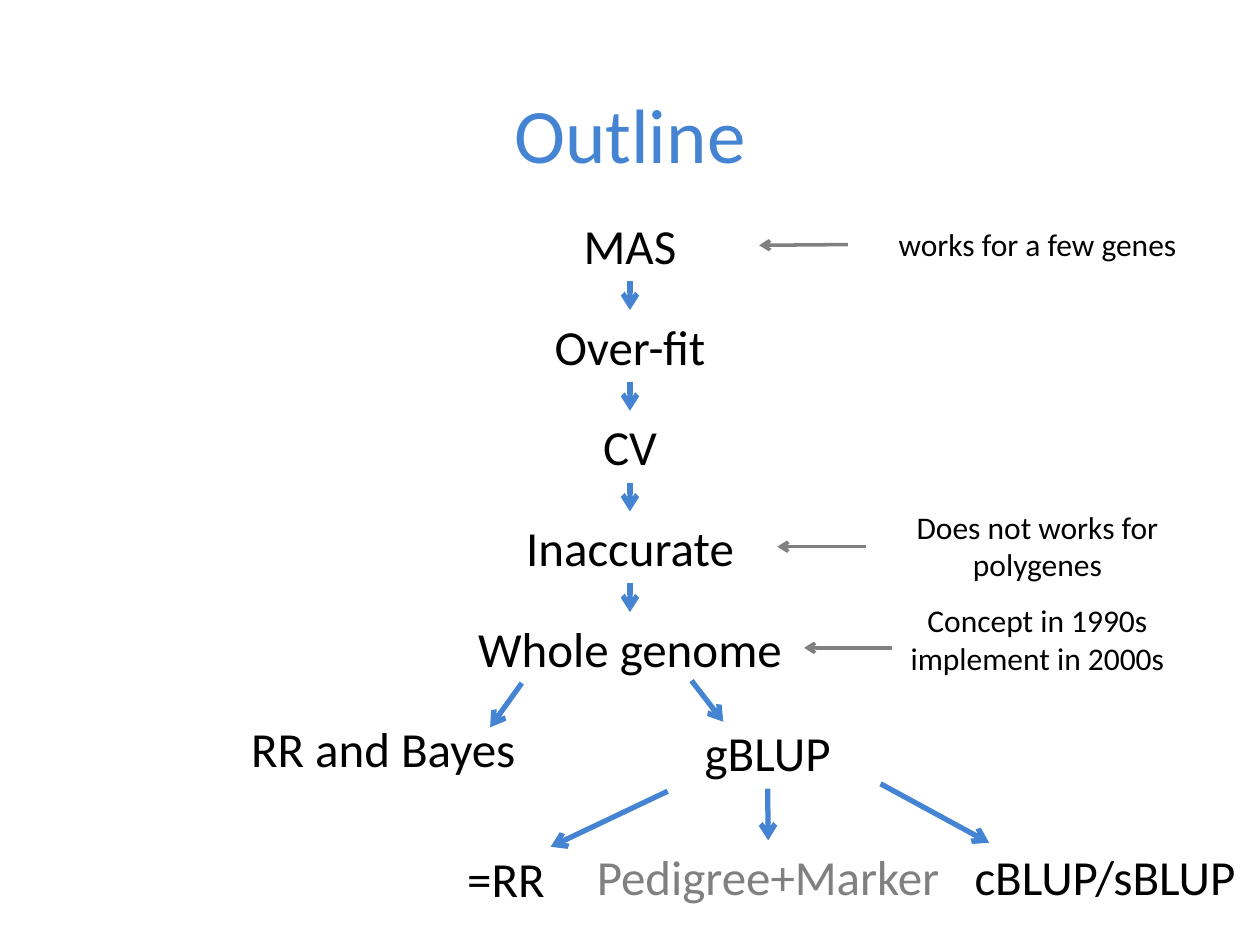
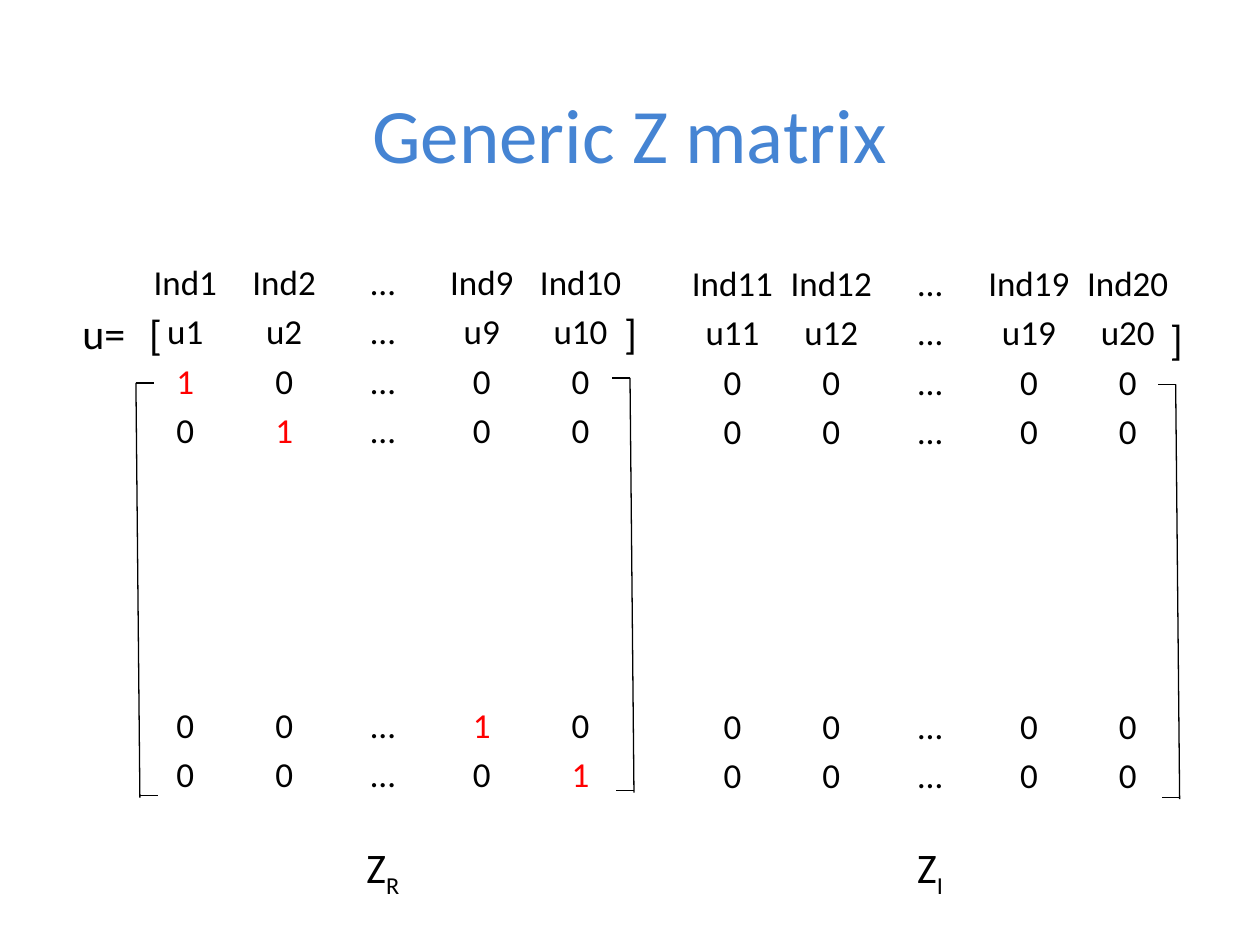
from lxml.etree import SubElement
from pptx import Presentation
from pptx.dml.color import RGBColor
from pptx.enum.shapes import MSO_CONNECTOR
from pptx.enum.text import MSO_ANCHOR, MSO_AUTO_SIZE, PP_ALIGN
from pptx.oxml.ns import qn
from pptx.util import Cm, Pt

FONT = "Calibri"
COLORS = {"title": "4584D3", "text": "000000", "muted": "808080", "one": "FF0000"}

# Outline: all places and lengths in centimetres
CENTER = 12.7
STEP_TOP, STEP_PITCH, STEP_HEIGHT = 4.22, 2.03, 1.45
STEPS = [("MAS", 5.21), ("Over-fit", 5.21), ("CV", 5.21),
         ("Inaccurate", 5.21), ("Whole genome", 7.37)]
BRANCHES = [  # text, left, top, width, colour
    ("RR and Bayes", 4.04, 14.35, 7.37, "text"),
    ("gBLUP", 11.79, 14.45, 7.37, "text"),
    ("=RR", 8.61, 16.99, 3.18, "text"),
    ("Pedigree+Marker", 11.18, 16.94, 8.61, "muted"),
    ("cBLUP/sBLUP", 19.15, 16.94, 6.25, "text"),
]
BRANCH_ARROWS = [
    ((10.52, 13.77), (9.88, 14.66)),
    ((13.94, 13.72), (14.58, 14.55)),
    ((13.46, 15.95), (11.1, 17.07)),
    ((17.75, 15.8), (19.94, 16.99)),
]
NOTE_LEFT, NOTE_WIDTH = 17.09, 7.65
NOTES = [  # text, top, height
    ("works for a few genes", 4.42, 1.02),
    ("Does not works for polygenes", 10.11, 1.8),
    ("Concept in 1990s implement in 2000s", 11.99, 1.8),
]
NOTE_ARROWS = [((17.45, 11.02), (15.67, 11.02)), ((17.98, 13.06), (16.21, 13.06))]

# Z matrix
MATRIX_SIZE = (9.96, 10.92)
GAP_ROWS = [""] * 5
MATRICES = [  # left, top, rows
    (2.74, 5.16, ["Ind1 Ind2 … Ind9 Ind10", "u1 u2 … u9 u10",
                  "1 0 … 0 0", "0 1 … 0 0", *GAP_ROWS,
                  "0 0 … 1 0", "0 0 … 0 1"]),
    (13.77, 5.18, ["Ind11 Ind12 … Ind19 Ind20", "u11 u12 … u19 u20",
                   *["0 0 … 0 0"] * 2, *GAP_ROWS, *["0 0 … 0 0"] * 2]),
]
VECTOR_MARKS = [("u=", 1.04, 6.07), ("[", 2.08, 6.1), ("]", 11.66, 6.07), ("]", 22.66, 6.2)]
BRACKETS = [(2.74, 7.72, 1), (12.7, 7.62, -1), (23.7, 7.75, -1)]  # left, top, tick direction
BRACKET_HEIGHT, BRACKET_LEAN, TICK = 8.36, 0.08, 0.36
MATRIX_NAMES = [("R", 6.78), ("I", 17.81)]


def style(para, size, color="text"):
    para.alignment = PP_ALIGN.CENTER
    for span in para.runs:
        span.font.name = FONT
        span.font.size = Pt(size)
        span.font.color.rgb = RGBColor.from_string(COLORS[color])


def add_text(page, text, left, top, width, height, size, color="text"):
    box = page.shapes.add_textbox(Cm(left), Cm(top), Cm(width), Cm(height))
    frame = box.text_frame
    frame.word_wrap = True
    frame.auto_size = MSO_AUTO_SIZE.SHAPE_TO_FIT_TEXT
    frame.text = text
    style(frame.paragraphs[0], size, color)
    return box


def add_page(deck, title):
    page = deck.slides.add_slide(deck.slide_layouts[6])
    frame = add_text(page, title, 1.27, 0.94, 22.86, 3.48, 44, "title").text_frame
    frame.auto_size = MSO_AUTO_SIZE.NONE
    frame.vertical_anchor = MSO_ANCHOR.MIDDLE
    return page


def add_line(page, start, end, color="text", width=0.75, arrow=False):
    line = page.shapes.add_connector(MSO_CONNECTOR.STRAIGHT, *map(Cm, start + end))
    line.line.color.rgb = RGBColor.from_string(COLORS[color])
    line.line.width = Pt(width)
    if arrow:
        SubElement(line.line._get_or_add_ln(), qn("a:tailEnd"), type="arrow")
    SubElement(line._element.spPr, qn("a:effectLst"))
    return line


def join(page, first, first_side, second, second_side, color="title", width=3):
    arrow = add_line(page, (0, 0), (1, 1), color, width, arrow=True)
    arrow.begin_connect(first, first_side)
    arrow.end_connect(second, second_side)


def add_matrix(page, left, top, rows):
    frame = page.shapes.add_table(len(rows), 5, *map(Cm, (left, top, *MATRIX_SIZE)))
    table = frame.table
    table.first_row = table.horz_banding = False
    for row, line in zip(table.rows, rows):
        values = line.split() or [""] * 5
        for cell, value in zip(row.cells, values):
            cell.fill.background()
            cell.margin_left = cell.margin_right = cell.margin_top = Cm(0.03)
            cell.margin_bottom = 0
            cell.vertical_anchor = MSO_ANCHOR.BOTTOM
            cell.text = value
            style(cell.text_frame.paragraphs[0], 20, "one" if value == "1" else "text")


def add_bracket(page, left, top, direction):
    foot_left, foot = left + BRACKET_LEAN, top + BRACKET_HEIGHT
    add_line(page, (left, top), (foot_left, foot))
    for x, y in ((left, top), (foot_left, foot - 0.04)):
        add_line(page, (x, y), (x + direction * TICK, y))


def build_outline(deck):
    page = add_page(deck, "Outline")
    steps = [add_text(page, text, CENTER - width / 2, STEP_TOP + i * STEP_PITCH,
                      width, STEP_HEIGHT, 28)
             for i, (text, width) in enumerate(STEPS)]
    notes = [add_text(page, text, NOTE_LEFT, top, NOTE_WIDTH, height, 18)
             for text, top, height in NOTES]
    branches = {text: add_text(page, text, left, top, width, STEP_HEIGHT, 28, color)
                for text, left, top, width, color in BRANCHES}
    # Arrows down the chain and out to the branches
    for upper, lower in zip(steps, steps[1:]):
        join(page, upper, 2, lower, 0)
    join(page, branches["gBLUP"], 2, branches["Pedigree+Marker"], 0)
    for start, end in BRANCH_ARROWS:
        add_line(page, start, end, "title", 3, arrow=True)
    # Arrows from the notes
    join(page, notes[0], 1, steps[0], 3, "muted", 2)
    for start, end in NOTE_ARROWS:
        add_line(page, start, end, "muted", 2, arrow=True)


def build_z_matrix(deck):
    page = add_page(deck, "Generic Z matrix")
    for matrix in MATRICES:
        add_matrix(page, *matrix)
    for text, left, top in VECTOR_MARKS:
        add_text(page, text, left, top, 2.11, 1.27, 24)
    for bracket in BRACKETS:
        add_bracket(page, *bracket)
    # Names with a subscript
    for letter, left in MATRIX_NAMES:
        para = add_text(page, "Z", left, 16.84, 1.88, 1.27, 24).text_frame.paragraphs[0]
        subscript = para.add_run()
        subscript.text = letter
        style(para, 24)
        subscript.font._element.set("baseline", "-25000")


def main():
    deck = Presentation()
    deck.slide_width, deck.slide_height = Cm(25.4), Cm(19.05)
    build_outline(deck)
    build_z_matrix(deck)
    deck.save("out.pptx")


if __name__ == "__main__":
    main()
